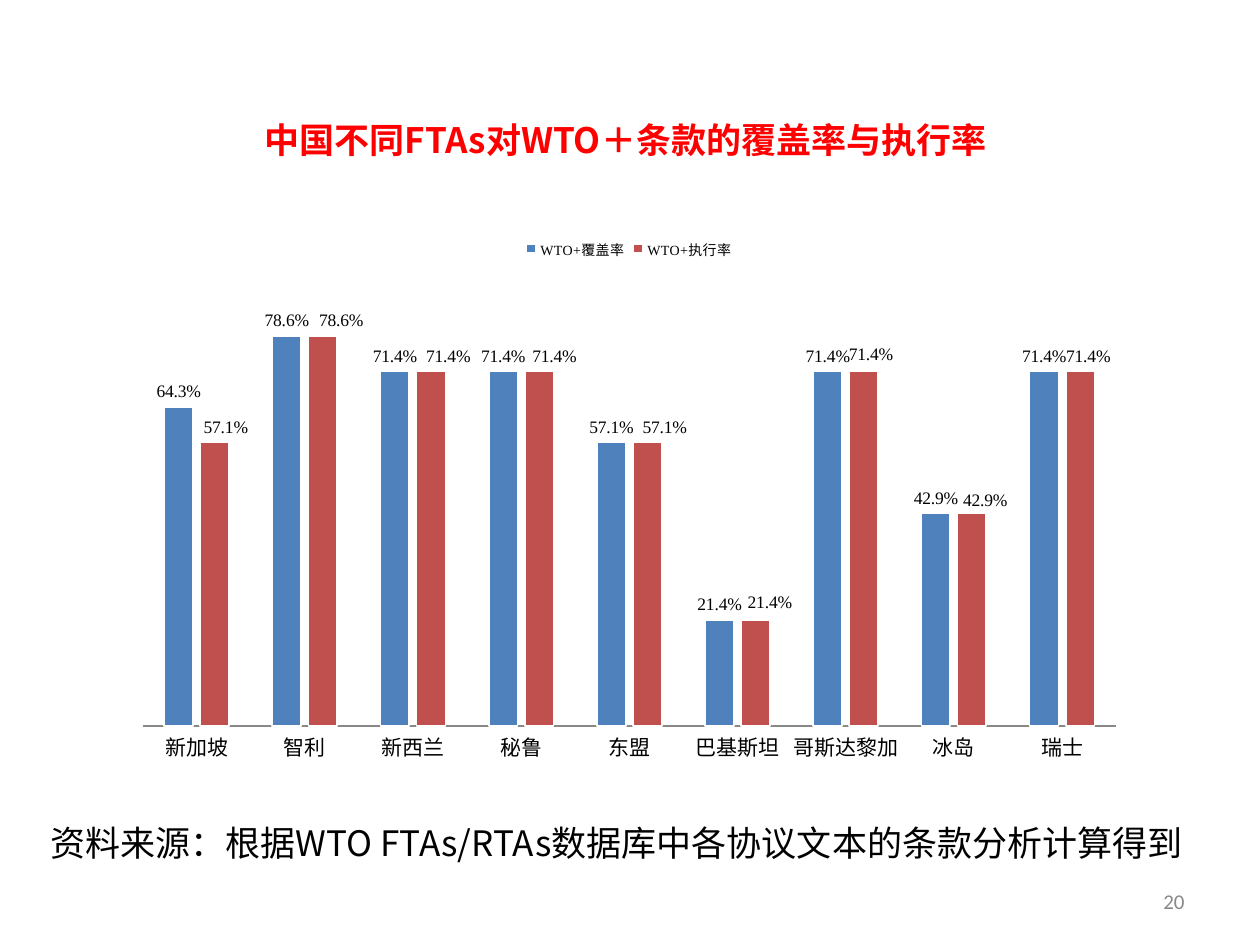
from copy import deepcopy

from lxml import etree
from pptx import Presentation
from pptx.chart.data import CategoryChartData
from pptx.dml.color import RGBColor
from pptx.enum.chart import (XL_CHART_TYPE, XL_LABEL_POSITION, XL_LEGEND_POSITION,
                             XL_TICK_MARK)
from pptx.enum.text import MSO_ANCHOR, MSO_AUTO_SIZE, PP_ALIGN
from pptx.oxml.ns import qn
from pptx.util import Inches, Pt

COLUMNS = XL_CHART_TYPE.COLUMN_CLUSTERED
OUTSIDE_END = XL_LABEL_POSITION.OUTSIDE_END
LEGEND_TOP = XL_LEGEND_POSITION.TOP
NO_TICKS = XL_TICK_MARK.NONE
TOP, MIDDLE = MSO_ANCHOR.TOP, MSO_ANCHOR.MIDDLE
LEFT, CENTER, RIGHT = PP_ALIGN.LEFT, PP_ALIGN.CENTER, PP_ALIGN.RIGHT

RED = RGBColor(0xFF, 0x00, 0x00)
BLACK = RGBColor(0x00, 0x00, 0x00)
WHITE = RGBColor(0xFF, 0xFF, 0xFF)
GRAY = RGBColor(0x89, 0x89, 0x89)
COVERAGE_BLUE = RGBColor(0x4F, 0x81, 0xBD)
ENFORCEMENT_RED = RGBColor(0xC0, 0x50, 0x4D)

SANS, SERIF, CJK = "Calibri", "Times New Roman", "Noto Sans CJK SC"
PERCENT = "0.0%"

SLIDE_WIDTH, SLIDE_HEIGHT = Inches(10), Inches(7.5)
# Boxes as shares of the slide: left, top, width, height
TITLE_BOX = (0.094, 0.119, 0.805, 0.093)
CHART_BOX = (0.097, 0.237, 0.805, 0.584)
SOURCE_BOX = (0.03, 0.863, 0.938, 0.091)
NUMBER_BOX = (0.717, 0.927, 0.233, 0.053)
# Plot area as shares of the chart
PLOT_BOX = {"x": 0.02, "y": 0.1, "w": 0.96, "h": 0.81}

PARTNERS = ["新加坡", "智利", "新西兰", "秘鲁", "东盟", "巴基斯坦", "哥斯达黎加", "冰岛", "瑞士"]
COVERAGE = [0.643, 0.786, 0.714, 0.714, 0.571, 0.214, 0.714, 0.429, 0.714]
ENFORCEMENT = [0.571] + COVERAGE[1:]
SERIES = [("WTO+覆盖率", COVERAGE, COVERAGE_BLUE),
          ("WTO+执行率", ENFORCEMENT, ENFORCEMENT_RED)]
# Shifts of the enforcement labels, in thousandths of the chart
LABEL_SHIFTS = [(11, 0), (18, 0), (17, 0), (15, 0), (17, 0),
                (14, -4), (7, -4), (13, 4), (8, 0)]


def scale(box):
    left, top, width, height = box
    return (int(left * SLIDE_WIDTH), int(top * SLIDE_HEIGHT),
            int(width * SLIDE_WIDTH), int(height * SLIDE_HEIGHT))


def set_format(target, **values):
    for name, value in values.items():
        setattr(target, name, value)


def set_font(font, size, name, color=BLACK, bold=False):
    set_format(font, size=Pt(size), name=name, bold=bold)
    font.color.rgb = color


def write_line(shape, box, text, align, anchor, size, name, color, bold=False):
    """Place a text shape and fill it with one formatted paragraph."""
    left, top, width, height = scale(box)
    set_format(shape, left=left, top=top, width=width, height=height)
    frame = shape.text_frame
    set_format(frame, word_wrap=True, auto_size=MSO_AUTO_SIZE.NONE, vertical_anchor=anchor)
    paragraph = frame.paragraphs[0]
    set_format(paragraph, alignment=align, space_before=Pt(0))
    run = paragraph.add_run()
    run.text = text
    set_font(run.font, size, name, color, bold)
    if name == CJK:
        latin = run.font._element.find(qn("a:latin"))
        east_asian = etree.Element(qn("a:ea"), typeface=name)
        latin.addnext(east_asian)
    return paragraph


def add_source_note(placeholder, box):
    paragraph = write_line(placeholder, box,
                           "资料来源：根据WTO FTAs/RTAs数据库中各协议文本的条款分析计算得到",
                           LEFT, TOP, 20, CJK, BLACK)
    properties = paragraph._p.get_or_add_pPr()
    properties.set("marL", str(Inches(0.38)))
    properties.set("indent", str(-Inches(0.38)))
    etree.SubElement(properties, qn("a:buNone"))


def manual_layout(values):
    layout = etree.Element(qn("c:layout"))
    manual = etree.SubElement(layout, qn("c:manualLayout"))
    for tag, value in values.items():
        etree.SubElement(manual, qn("c:" + tag), val=str(value))
    return layout


def fix_plot_area(chart):
    plot_area = chart._chartSpace.find(".//" + qn("c:plotArea"))
    for old in plot_area.findall(qn("c:layout")):
        plot_area.remove(old)
    modes = {"layoutTarget": "inner", "xMode": "edge", "yMode": "edge"}
    plot_area.insert(0, manual_layout({**modes, **PLOT_BOX}))


def shift_labels(labels, shifts):
    """Give each point its own label, moved off its default place."""
    element = labels._element
    shared = [child for child in element if child.tag != qn("c:showLeaderLines")]
    for index, (across, down) in enumerate(shifts):
        label = etree.Element(qn("c:dLbl"))
        etree.SubElement(label, qn("c:idx"), val=str(index))
        label.append(manual_layout({"x": across / 1000, "y": down / 1000}))
        label.extend(deepcopy(child) for child in shared)
        element.insert(index, label)


def style_series(series, color):
    series.format.fill.solid()
    series.format.fill.fore_color.rgb = color
    series.format.line.color.rgb = WHITE
    series.format.line.width = Pt(1)
    labels = series.data_labels
    set_format(labels, show_value=True, number_format=PERCENT,
               number_format_is_linked=False, position=OUTSIDE_END)
    set_font(labels.font, 10, SERIF)


def add_rate_chart(slide, box):
    data = CategoryChartData(number_format=PERCENT)
    data.categories = PARTNERS
    for name, values, _ in SERIES:
        data.add_series(name, values)
    chart = slide.shapes.add_chart(COLUMNS, *scale(box), data).chart
    set_format(chart, has_title=False, has_legend=True)
    set_font(chart.font, 10, SANS)

    set_format(chart.legend, position=LEGEND_TOP, include_in_layout=False)
    set_font(chart.legend.font, 8, SERIF)

    set_format(chart.value_axis, visible=False, has_major_gridlines=False,
               minimum_scale=0, maximum_scale=0.9)
    category_axis = chart.category_axis
    set_format(category_axis, major_tick_mark=NO_TICKS, minor_tick_mark=NO_TICKS)
    category_axis.format.line.color.rgb = GRAY
    set_font(category_axis.tick_labels.font, 12, SANS)

    plot = chart.plots[0]
    set_format(plot, gap_width=150, overlap=-25, vary_by_categories=False)
    for series, (_, _, color) in zip(plot.series, SERIES):
        style_series(series, color)
    shift_labels(plot.series[1].data_labels, LABEL_SHIFTS)
    fix_plot_area(chart)


def main():
    presentation = Presentation()
    set_format(presentation, slide_width=SLIDE_WIDTH, slide_height=SLIDE_HEIGHT)
    slide = presentation.slides.add_slide(presentation.slide_layouts[1])
    add_rate_chart(slide, CHART_BOX)
    write_line(slide.shapes.title, TITLE_BOX, "中国不同FTAs对WTO＋条款的覆盖率与执行率",
               CENTER, TOP, 20, CJK, RED, bold=True)
    add_source_note(slide.placeholders[1], SOURCE_BOX)
    number = slide.shapes.add_textbox(*scale(NUMBER_BOX))
    write_line(number, NUMBER_BOX, "20", RIGHT, MIDDLE, 12, SANS, GRAY)
    presentation.save("out.pptx")


if __name__ == "__main__":
    main()
